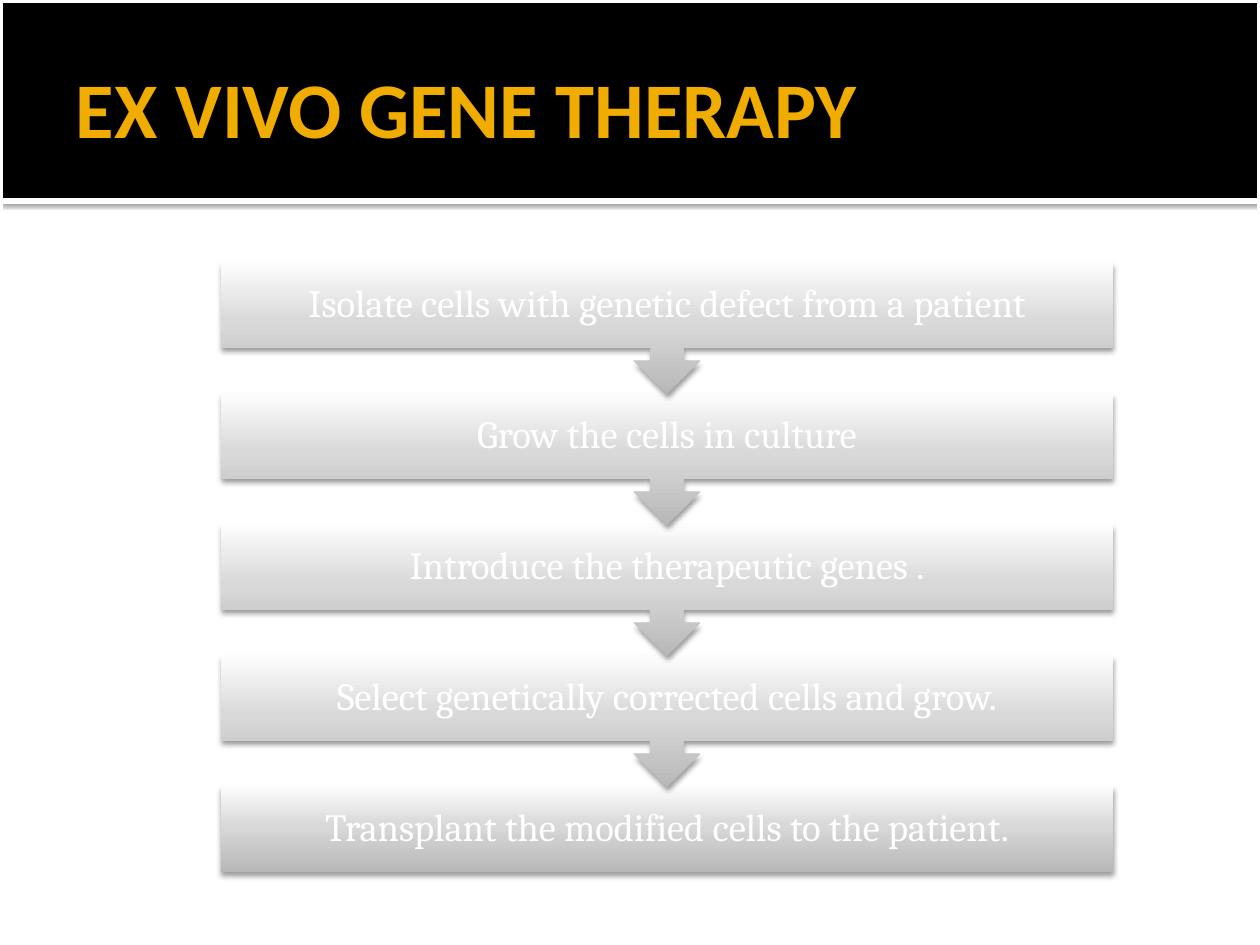
import copy

import lxml.etree
import pptx
import pptx.dml.color
import pptx.enum.shapes
import pptx.enum.text
import pptx.oxml.ns
import pptx.util

RGBColor = pptx.dml.color.RGBColor
Shape = pptx.enum.shapes.MSO_SHAPE
Align = pptx.enum.text.PP_ALIGN
Anchor = pptx.enum.text.MSO_ANCHOR
qn = pptx.oxml.ns.qn

BLACK = RGBColor(0x00, 0x00, 0x00)
WHITE = RGBColor(0xFF, 0xFF, 0xFF)
AMBER = RGBColor(0xF0, 0xAD, 0x00)
STEP_STOPS = [
    (0, RGBColor(0xB8, 0xB8, 0xB8)),
    (0.55, RGBColor(0xD9, 0xD9, 0xD9)),
    (1, RGBColor(0xFD, 0xFD, 0xFD)),
]

STEPS = [
    "Isolate cells with genetic defect from a patient",
    "Grow the cells in culture",
    "Introduce the therapeutic genes .",
    "Select genetically corrected cells and grow.",
    "Transplant the modified cells to the patient.",
]
SLIDE_WIDTH, SLIDE_HEIGHT = 1260, 945
BAND_HEIGHT = 198
STEP_LEFT, STEP_TOP, STEP_WIDTH = 221, 262, 892
STEP_PITCH, BOX_HEIGHT, CALLOUT_HEIGHT = 131, 86, 132


def px(length):
    return pptx.util.Emu(round(length * 914400 / 126))


class SlideBuilder:
    title_font = "Calibri"
    body_font = "Cambria"

    def __init__(self, deck):
        self.slide = deck.slides.add_slide(deck.slide_layouts[5])

    def shape(self, kind, left, top, width, height, fill=None):
        shape = self.slide.shapes.add_shape(
            kind, px(left), px(top), px(width), px(height))
        shape.shadow.inherit = False
        shape.line.fill.background()
        if fill is None:
            shape.fill.background()
        else:
            shape.fill.solid()
            shape.fill.fore_color.rgb = fill
        return shape

    def shadow(self, shape, opacity, blur, distance):
        """Cast a black shadow straight down; blur and distance are in points."""
        effects = shape.element.spPr.find(qn("a:effectLst"))
        outer = lxml.etree.SubElement(
            effects, qn("a:outerShdw"), blurRad=str(pptx.util.Pt(blur)),
            dist=str(pptx.util.Pt(distance)), dir="5400000", rotWithShape="0")
        color = lxml.etree.SubElement(outer, qn("a:srgbClr"), val=str(BLACK))
        lxml.etree.SubElement(color, qn("a:alpha"), val=str(opacity * 1000))

    def gradient(self, shape, stops):
        """Fill from the bottom edge upwards."""
        shape.fill.gradient()
        shape.fill.gradient_angle = 90
        stop_list = shape.element.spPr.find(".//" + qn("a:gsLst"))
        while len(stop_list) < len(stops):
            stop_list.append(copy.deepcopy(stop_list[-1]))
        for stop, (position, color) in zip(shape.fill.gradient_stops, stops):
            stop.position = position
            stop.color.rgb = color

    def text(self, shape, text, font, size, color, align, insets, bold=False):
        frame = shape.text_frame
        frame.word_wrap = True
        frame.vertical_anchor = Anchor.MIDDLE
        (frame.margin_left, frame.margin_top,
         frame.margin_right, frame.margin_bottom) = map(px, insets)
        para = frame.paragraphs[0]
        para.text = text
        para.alignment = align
        para.font.name = font
        para.font.size = pptx.util.Pt(size)
        para.font.bold = bold
        para.font.color.rgb = color
        return para

    def title(self, text, left, top, width, height):
        title = self.slide.shapes.title
        title.left, title.top = px(left), px(top)
        title.width, title.height = px(width), px(height)
        self.text(title, text, self.title_font, 45, AMBER, Align.LEFT,
                  (13, 6, 6, 6), bold=True)
        # Bring the title in front of the band drawn so far.
        title.element.getparent().append(title.element)

    def frame(self, line_width):
        frame = self.shape(Shape.RECTANGLE, 0, 0, SLIDE_WIDTH, SLIDE_HEIGHT)
        frame.line.color.rgb = WHITE
        frame.line.width = pptx.util.Pt(line_width)

    def step(self, text, top, is_last):
        kind = Shape.RECTANGLE if is_last else Shape.DOWN_ARROW_CALLOUT
        height = BOX_HEIGHT if is_last else CALLOUT_HEIGHT
        step = self.shape(kind, STEP_LEFT, top, STEP_WIDTH, height)
        self.gradient(step, STEP_STOPS)
        self.shadow(step, 38, 3.1, 2)
        para = self.text(step, text, self.body_font, 22, WHITE, Align.CENTER,
                         (21, 21, 21, 21))
        para.line_spacing = 0.9


def main():
    deck = pptx.Presentation()
    deck.slide_width, deck.slide_height = px(SLIDE_WIDTH), px(SLIDE_HEIGHT)
    builder = SlideBuilder(deck)

    rule = builder.shape(Shape.RECTANGLE, 0, BAND_HEIGHT, SLIDE_WIDTH, 6, WHITE)
    builder.shadow(rule, 60, 2.5, 0.8)
    builder.shape(Shape.RECTANGLE, 0, 0, SLIDE_WIDTH, BAND_HEIGHT, BLACK)
    builder.title("EX VIVO GENE THERAPY", 63, 21, 1134, 173)
    builder.frame(3.78)

    # The lowest step goes first, so each arrow lies over the box it points to.
    for index, text in reversed(list(enumerate(STEPS))):
        builder.step(text, STEP_TOP + index * STEP_PITCH,
                     is_last=index == len(STEPS) - 1)

    deck.save("out.pptx")


if __name__ == "__main__":
    main()
